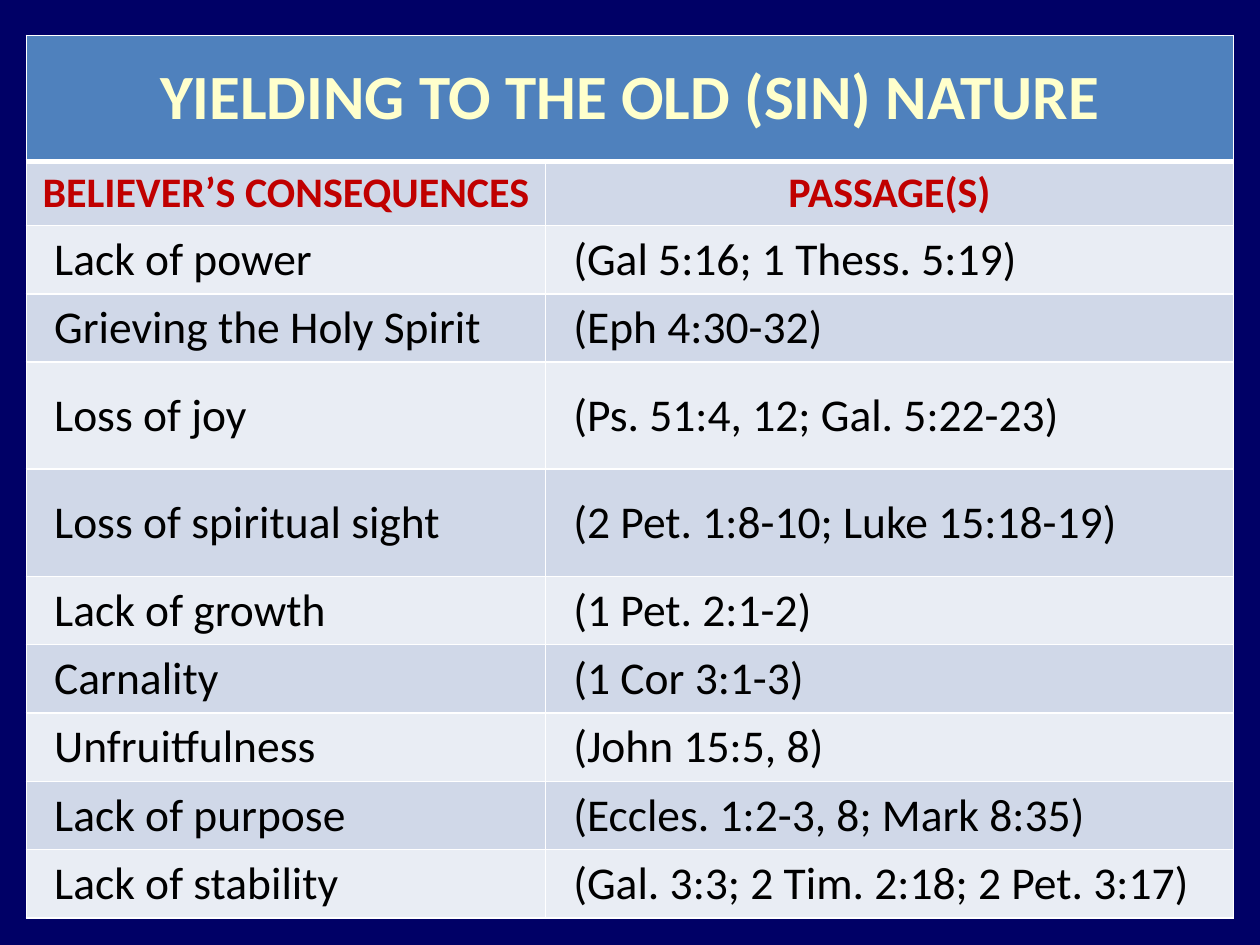
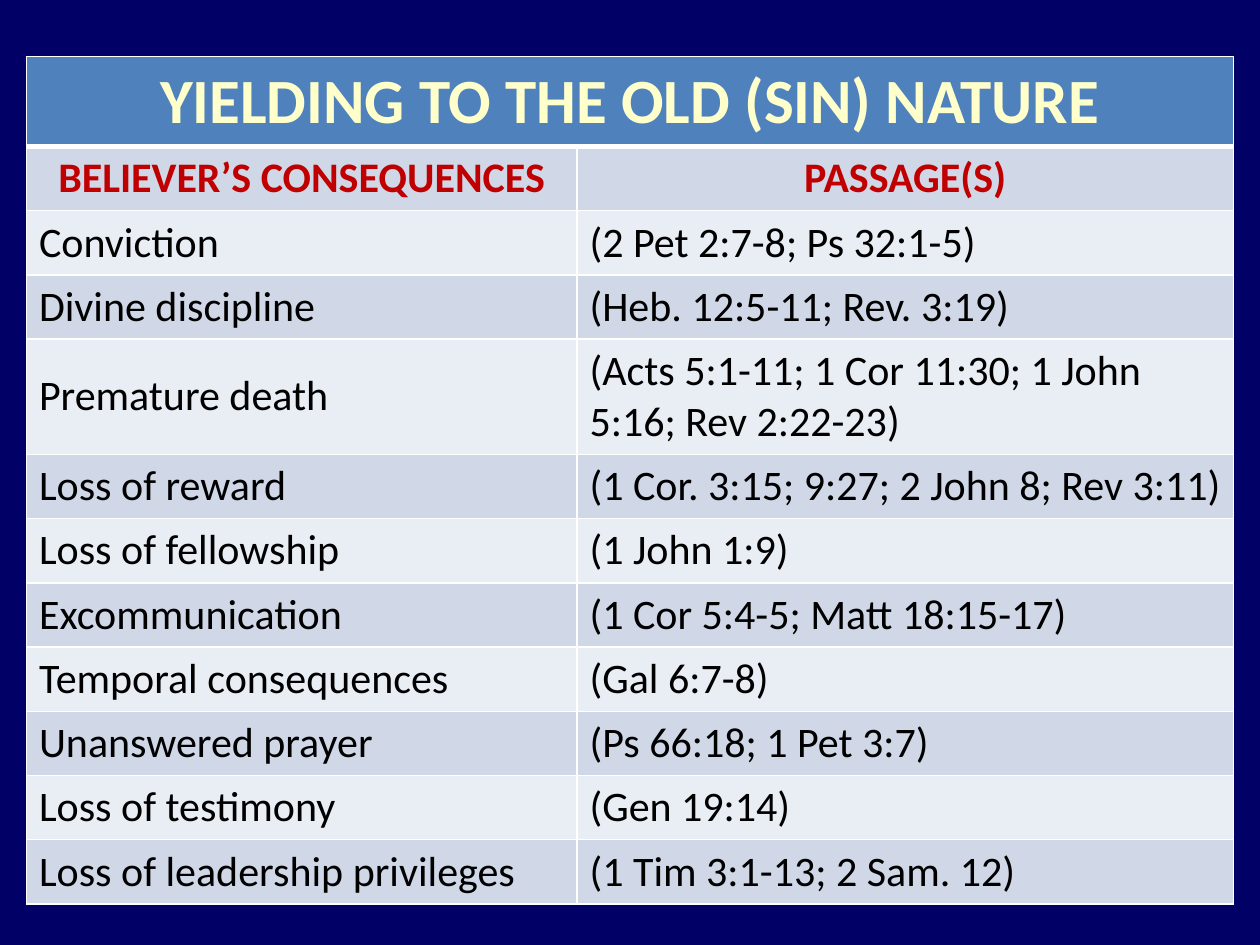
"""Builds two slides of tables on the consequences of yielding to the old nature."""
from dataclasses import dataclass

from lxml.etree import SubElement
from pptx import Presentation
from pptx.dml.color import RGBColor as RGB
from pptx.enum.text import MSO_ANCHOR as ANCHOR, PP_ALIGN as ALIGN
from pptx.oxml.ns import qn
from pptx.util import Inches, Pt


@dataclass(frozen=True)
class Theme:
    font: str = "Calibri"
    background: str = "000066"
    title_fill: str = "4F81BD"
    title_text: str = "FFFFCC"
    heading_text: str = "C00000"
    body_text: str = "000000"
    border: str = "FFFFFF"
    bands: tuple = ("D0D8E8", "E9EDF4")
    title_size: int = 36
    heading_size: int = 24
    thin: int = 1
    thick: int = 3


theme = Theme()
TITLE = "YIELDING TO THE OLD (SIN) NATURE"
HEADINGS = ("BELIEVER’S CONSEQUENCES", "PASSAGE(S)")
LEFT, WIDTH, HEADING_HEIGHT = 0.21, 9.58, 0.51

slides = [
    dict(top=0.28, first_col=4.12, title_height=1, row_height=0.54,
         tall_rows={"Loss of joy": 0.85, "Loss of spiritual sight": 0.85},
         size=26, indent=0.12, rows=[
             ("Lack of power", "(Gal 5:16; 1 Thess. 5:19)"),
             ("Grieving the Holy Spirit", "(Eph 4:30-32)"),
             ("Loss of joy", "(Ps. 51:4, 12; Gal. 5:22-23)"),
             ("Loss of spiritual sight", "(2 Pet. 1:8-10; Luke 15:18-19)"),
             ("Lack of growth", "(1 Pet. 2:1-2)"),
             ("Carnality", "(1 Cor 3:1-3)"),
             ("Unfruitfulness", "(John 15:5, 8)"),
             ("Lack of purpose", "(Eccles. 1:2-3, 8; Mark 8:35)"),
             ("Lack of stability", "(Gal. 3:3; 2 Tim. 2:18; 2 Pet. 3:17)"),
         ]),
    dict(top=0.45, first_col=4.37, title_height=0.71, row_height=0.51,
         tall_rows={"Premature death": 0.91},
         size=24, indent=0, rows=[
             ("Conviction", "(2 Pet 2:7-8; Ps 32:1-5)"),
             ("Divine discipline", "(Heb. 12:5-11; Rev. 3:19)"),
             ("Premature death", "(Acts 5:1-11; 1 Cor 11:30; 1 John 5:16; Rev 2:22-23)"),
             ("Loss of reward", "(1 Cor. 3:15; 9:27; 2 John 8; Rev 3:11)"),
             ("Loss of fellowship", "(1 John 1:9)"),
             ("Excommunication", "(1 Cor 5:4-5; Matt 18:15-17)"),
             ("Temporal consequences", "(Gal 6:7-8)"),
             ("Unanswered prayer", "(Ps 66:18; 1 Pet 3:7)"),
             ("Loss of testimony", "(Gen 19:14)"),
             ("Loss of leadership privileges", "(1 Tim 3:1-13; 2 Sam. 12)"),
         ]),
]


def write(cell, text, size, color, bold=False, align=ALIGN.LEFT, indent=0):
    cell.vertical_anchor = ANCHOR.MIDDLE
    p = cell.text_frame.paragraphs[0]
    p.alignment = align
    if indent:
        pPr = p._p.get_or_add_pPr()
        pPr.set("marL", str(Inches(indent)))
        pPr.set("indent", "0")
    r = p.add_run()
    r.text = text
    r.font.name, r.font.size, r.font.bold = theme.font, Pt(size), bold
    r.font.color.rgb = RGB.from_string(color)


def paint(cell, fill, top=theme.thin, bottom=theme.thin):
    tcPr = cell._tc.get_or_add_tcPr()
    for side, width in zip("LRTB", (theme.thin, theme.thin, top, bottom)):
        ln = SubElement(tcPr, qn(f"a:ln{side}"), w=str(Pt(width)))
        SubElement(SubElement(ln, qn("a:solidFill")), qn("a:srgbClr"), val=theme.border)
    cell.fill.solid()
    cell.fill.fore_color.rgb = RGB.from_string(fill)


prs = Presentation()
prs.slide_width, prs.slide_height = Inches(10), Inches(7.5)

for spec_row in slides:
    s = prs.slides.add_slide(prs.slide_layouts[6])
    s.background.fill.solid()
    s.background.fill.fore_color.rgb = RGB.from_string(theme.background)

    rows = spec_row["rows"]
    heights = [spec_row["title_height"], HEADING_HEIGHT]
    heights += [spec_row["tall_rows"].get(name, spec_row["row_height"]) for name, _ in rows]
    table = s.shapes.add_table(len(heights), 2, Inches(LEFT), Inches(spec_row["top"]),
                               Inches(WIDTH), Inches(sum(heights))).table
    table.columns[0].width = Inches(spec_row["first_col"])
    table.columns[1].width = Inches(WIDTH - spec_row["first_col"])
    for row, height in zip(table.rows, heights):
        row.height = Inches(height)

    table.cell(0, 0).merge(table.cell(0, 1))
    write(table.cell(0, 0), TITLE, theme.title_size, theme.title_text,
          bold=True, align=ALIGN.CENTER)
    for col in range(2):
        paint(table.cell(0, col), theme.title_fill, bottom=theme.thick)
        heading = table.cell(1, col)
        write(heading, HEADINGS[col], theme.heading_size, theme.heading_text,
              bold=True, align=ALIGN.CENTER)
        paint(heading, theme.bands[0], top=theme.thick)
        for i, texts in enumerate(rows, 1):
            cell = table.cell(i + 1, col)
            write(cell, texts[col], spec_row["size"], theme.body_text,
                  indent=spec_row["indent"])
            paint(cell, theme.bands[i % 2])

prs.save("out.pptx")
